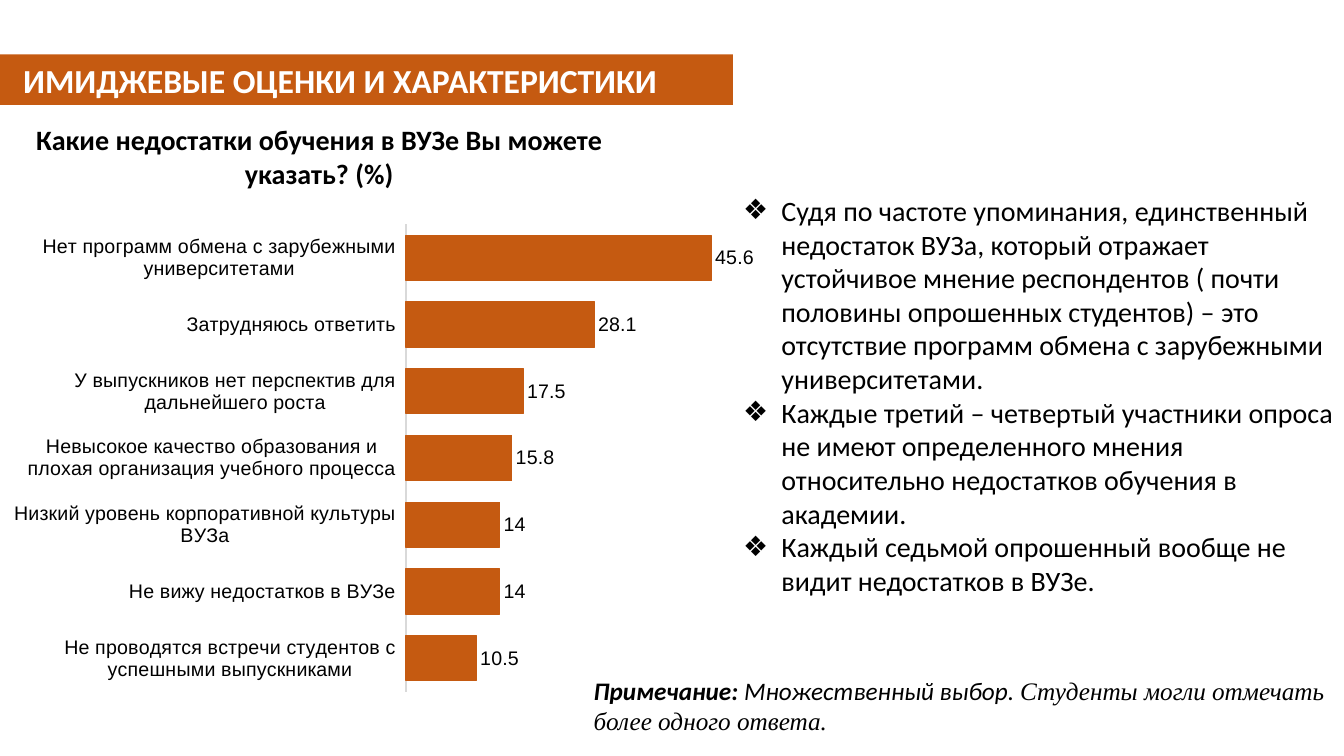
"""Build the slide on the perceived drawbacks of studying at the university."""
from dataclasses import dataclass

from lxml.etree import SubElement
from pptx import Presentation
from pptx.chart.data import CategoryChartData
from pptx.dml.color import RGBColor
from pptx.enum.chart import XL_CHART_TYPE, XL_LABEL_POSITION, XL_TICK_LABEL_POSITION, XL_TICK_MARK
from pptx.enum.text import MSO_ANCHOR, MSO_AUTO_SIZE, PP_ALIGN
from pptx.oxml import parse_xml
from pptx.oxml.ns import nsdecls, qn
from pptx.util import Inches, Pt


@dataclass(frozen=True)
class Theme:
    """Colours, fonts and type sizes of the slide."""

    accent: RGBColor = RGBColor(0xC5, 0x5A, 0x11)
    ink: RGBColor = RGBColor(0, 0, 0)
    paper: RGBColor = RGBColor(0xFF, 0xFF, 0xFF)
    rule: RGBColor = RGBColor(0xD9, 0xD9, 0xD9)
    main_font: str = "Calibri"
    chart_font: str = "Arial"
    note_font: str = "Times New Roman"
    heading: Pt = Pt(24)
    body: Pt = Pt(20)
    note: Pt = Pt(18)
    label: Pt = Pt(14)
    hairline: Pt = Pt(0.75)


THEME = Theme()
WIDTH, HEIGHT = Inches(13.33), Inches(7.5)
SPLIT = 54.54

HEADING = "ИМИДЖЕВЫЕ ОЦЕНКИ И ХАРАКТЕРИСТИКИ"
QUESTION = "Какие недостатки обучения в ВУЗе Вы можете указать? (%)"
FINDINGS = (
    "Судя по частоте упоминания, единственный недостаток ВУЗа, который отражает "
    "устойчивое мнение респондентов ( почти половины опрошенных студентов) – это "
    "отсутствие программ обмена с зарубежными университетами.",
    "Каждые третий – четвертый участники опроса не имеют определенного мнения "
    "относительно недостатков обучения в академии.",
    "Каждый седьмой опрошенный вообще не видит недостатков в ВУЗе.",
)
DRAWBACKS = {
    "Не проводятся встречи студентов с успешными выпускниками": 10.5,
    "Не вижу недостатков в ВУЗе": 14,
    "Низкий уровень корпоративной культуры ВУЗа": 14,
    "Невысокое качество образования и плохая организация учебного процесса": 15.8,
    "У выпускников нет перспектив для дальнейшего роста": 17.5,
    "Затрудняюсь ответить": 28.1,
    "Нет программ обмена с зарубежными университетами": 45.6,
}
NOTE = (
    ("Примечание: ", THEME.main_font, True),
    ("Множественный выбор. ", THEME.main_font, False),
    ("Студенты могли отмечать более одного ответа.", THEME.note_font, False),
)


def area(left, top, width, height):
    """Turn percentages of the slide into left, top, width and height."""
    return (int(WIDTH * left / 100), int(HEIGHT * top / 100),
            int(WIDTH * width / 100), int(HEIGHT * height / 100))


def place(holder, bounds):
    """Move a placeholder to the given bounds."""
    holder.left, holder.top, holder.width, holder.height = bounds


def style(font, size, color=THEME.ink, name=THEME.main_font, bold=False):
    """Set the size, colour, face and weight of a font."""
    font.size, font.name, font.bold = size, name, bold
    font.color.rgb = color


def fill_banner(title, bounds):
    """Format the title as a coloured band."""
    place(title, bounds)
    title.fill.solid()
    title.fill.fore_color.rgb = THEME.accent
    frame = title.text_frame
    frame.text = HEADING
    frame.auto_size = MSO_AUTO_SIZE.NONE
    frame.vertical_anchor = MSO_ANCHOR.MIDDLE
    frame.margin_left = Inches(0.23)
    heading = frame.paragraphs[0]
    heading.alignment = PP_ALIGN.LEFT
    style(heading.font, THEME.heading, THEME.paper, bold=True)


def fill_findings(body, bounds):
    """Write the findings as a diamond-bulleted list."""
    place(body, bounds)
    frame = body.text_frame
    frame.text = "\n".join(FINDINGS)
    frame.auto_size = MSO_AUTO_SIZE.NONE
    indent = Inches(0.38)
    for finding in frame.paragraphs:
        finding.space_before = Pt(0)
        style(finding.font, THEME.body)
        properties = finding._p.get_or_add_pPr()
        properties.set("marL", str(indent))
        properties.set("indent", str(-indent))
        bullet = parse_xml(f'<a:buChar {nsdecls("a")} char="❖"/>')
        properties.insert_element_before(bullet, "a:tabLst", "a:defRPr", "a:extLst")


def add_paragraph_box(slide, bounds):
    """Add a wrapping text box and return its paragraph."""
    frame = slide.shapes.add_textbox(*bounds).text_frame
    frame.word_wrap = True
    return frame.paragraphs[0]


def add_question(slide, bounds):
    """Add the survey question above the chart."""
    question = add_paragraph_box(slide, bounds)
    question.text = QUESTION
    question.alignment = PP_ALIGN.CENTER
    style(question.font, THEME.body, bold=True)


def add_note(slide, bounds):
    """Add the italic note with its mixed faces."""
    note = add_paragraph_box(slide, bounds)
    for text, face, bold in NOTE:
        part = note.add_run()
        part.text = text
        style(part.font, THEME.note, name=face, bold=bold)
        part.font.italic = True


def fix_plot_area(chart, **shares):
    """Fix the inner plot area at shares of the chart."""
    plot_area = chart._chartSpace.chart.plotArea
    for layout in plot_area.findall(qn("c:layout")):
        plot_area.remove(layout)
    layout = parse_xml(f'<c:layout {nsdecls("c")}/>')
    plot_area.insert(0, layout)
    manual = SubElement(layout, qn("c:manualLayout"))
    settings = {"layoutTarget": "inner", "xMode": "edge", "yMode": "edge", **shares}
    for tag, value in settings.items():
        SubElement(manual, qn(f"c:{tag}")).set("val", str(value))


def add_drawbacks_chart(slide, bounds):
    """Add the bar chart of answers."""
    answers = CategoryChartData()
    answers.categories = list(DRAWBACKS)
    answers.add_series("Series 1", list(DRAWBACKS.values()))
    chart = slide.shapes.add_chart(XL_CHART_TYPE.BAR_CLUSTERED, *bounds, answers).chart
    chart.has_title = chart.has_legend = False
    style(chart.font, THEME.label, name=THEME.chart_font)

    scale = chart.value_axis
    scale.visible = scale.has_major_gridlines = False
    scale.minimum_scale, scale.maximum_scale = 0, 50
    reasons = chart.category_axis
    reasons.major_tick_mark = reasons.minor_tick_mark = XL_TICK_MARK.NONE
    reasons.tick_label_position = XL_TICK_LABEL_POSITION.LOW
    reasons.format.line.color.rgb = THEME.rule
    reasons.format.line.width = THEME.hairline

    plot = chart.plots[0]
    plot.gap_width = 48
    plot.vary_by_categories = False
    bars = plot.series[0].format
    bars.fill.solid()
    bars.fill.fore_color.rgb = THEME.accent
    bars.line.color.rgb = THEME.accent
    bars.line.width = THEME.hairline
    plot.has_data_labels = True
    plot.data_labels.show_value = True
    plot.data_labels.position = XL_LABEL_POSITION.OUTSIDE_END
    style(plot.data_labels.font, THEME.label, name=THEME.chart_font)
    fix_plot_area(chart, x=0.51, y=0.03, w=0.43, h=0.95)


def main():
    """Build and save the slide."""
    deck = Presentation()
    deck.slide_width, deck.slide_height = WIDTH, HEIGHT
    slide = deck.slides.add_slide(deck.slide_layouts[1])
    title, body = slide.placeholders
    fill_banner(title, area(0, 7.2, SPLIT, 6.67))
    fill_findings(body, area(SPLIT, 24.93, 100 - SPLIT, 60.13))
    add_question(slide, area(0, 15.6, 47.49, 10.27))
    add_drawbacks_chart(slide, area(0.68, 27.73, 57.91, 65.07))
    add_note(slide, area(43.44, 88.67, 56.56, 9.47))
    deck.save("out.pptx")


if __name__ == "__main__":
    main()
